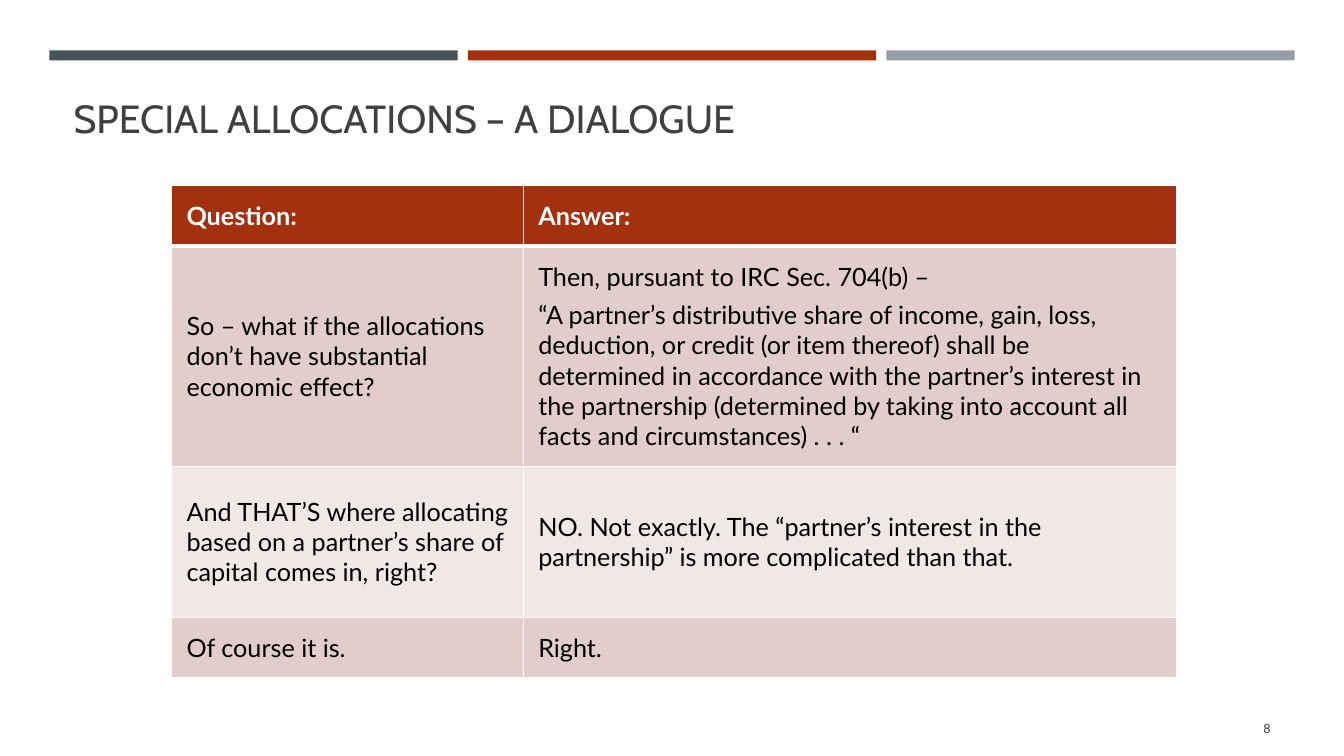
from dataclasses import dataclass

from lxml import etree
from pptx import Presentation
from pptx.dml.color import RGBColor
from pptx.enum.shapes import MSO_SHAPE
from pptx.enum.text import MSO_ANCHOR, PP_ALIGN
from pptx.oxml.ns import qn
from pptx.util import Inches, Pt

RECT = MSO_SHAPE.RECTANGLE
MIDDLE, BOTTOM = MSO_ANCHOR.MIDDLE, MSO_ANCHOR.BOTTOM
LEFT, RIGHT = PP_ALIGN.LEFT, PP_ALIGN.RIGHT


@dataclass(frozen=True)
class Theme:
    """Colours, fonts and type sizes of the slide."""
    slate: str = "465359"
    rust: str = "A5300F"
    steel: str = "969FA7"
    ink: str = "404040"
    black: str = "000000"
    white: str = "FFFFFF"
    rose: str = "E1CDCC"
    blush: str = "F0E8E7"
    head: str = "Cabin"
    body: str = "Lato"
    title: int = 28
    text: int = 18
    small: int = 9


THEME = Theme()
ROWS = [
    ("Question:", "Answer:"),
    ("So – what if the allocations don’t have substantial economic effect?",
     "Then, pursuant to IRC Sec. 704(b) –\n"
     "“A partner’s distributive share of income, gain, loss, deduction, or credit "
     "(or item thereof) shall be determined in accordance with the partner’s "
     "interest in the partnership (determined by taking into account all facts "
     "and circumstances) . . . “"),
    ("And THAT’S where allocating based on a partner’s share of capital comes in, right?",
     "NO. Not exactly. The “partner’s interest in the partnership” is more "
     "complicated than that."),
    ("Of course it is.", "Right."),
]


def style(frame, font, size, color, bold=False, align=LEFT):
    """Format every run of a text frame."""
    for para in frame.paragraphs:
        para.alignment = align
        for run in para.runs:
            run.font.name = font
            run.font.size = Pt(size)
            run.font.bold = bold
            run.font.color.rgb = RGBColor.from_string(color)


def add_bars(slide, left, top, width, height):
    """Draw the three equal bars with a fixed gap across the box."""
    gap = 0.1
    colors = (THEME.slate, THEME.rust, THEME.steel)
    span = (width - gap * (len(colors) - 1)) / len(colors)
    for i, color in enumerate(colors):
        bar = slide.shapes.add_shape(
            RECT, Inches(left + i * (span + gap)), Inches(top),
            Inches(span), Inches(height))
        bar.shadow.inherit = False
        bar.fill.solid()
        bar.fill.fore_color.rgb = RGBColor.from_string(color)
        bar.line.fill.background()


def set_title(slide, text, left, top, width, height):
    """Place and format the title placeholder."""
    title = slide.shapes.title
    title.left, title.top = Inches(left), Inches(top)
    title.width, title.height = Inches(width), Inches(height)
    frame = title.text_frame
    frame.text = text
    frame.word_wrap = True
    frame.vertical_anchor = BOTTOM
    style(frame, THEME.head, THEME.title, THEME.ink)


def add_edges(cell, top, base):
    """Give a cell white borders with the given top and base widths."""
    props = cell._tc.get_or_add_tcPr()
    edges = (("a:lnL", 1), ("a:lnR", 1), ("a:lnT", top), ("a:lnB", base))
    for i, (tag, width) in enumerate(edges):
        line = etree.Element(qn(tag), w=str(Pt(width)))
        fill = etree.SubElement(line, qn("a:solidFill"))
        etree.SubElement(fill, qn("a:srgbClr"), val=THEME.white)
        props.insert(i, line)


def fill_cell(cell, text, row):
    """Write one cell and style it by its row number."""
    head = row == 0
    cell.text_frame.text = text
    cell.vertical_anchor = MIDDLE
    cell.margin_left = cell.margin_right = Inches(0.15)
    cell.margin_top = cell.margin_bottom = Inches(0.15)
    for para in cell.text_frame.paragraphs[:-1]:
        para.space_after = Pt(6)
    style(cell.text_frame, THEME.body, THEME.text,
          THEME.white if head else THEME.black, head)
    band = THEME.rose if row % 2 else THEME.blush
    cell.fill.solid()
    cell.fill.fore_color.rgb = RGBColor.from_string(THEME.rust if head else band)
    add_edges(cell, 3 if row == 1 else 1, 3 if head else 1)


def add_grid(slide, left, top, width, height):
    """Build the question and answer table inside the box."""
    table = slide.shapes.add_table(
        len(ROWS), 2, Inches(left), Inches(top), Inches(width), Inches(height)).table
    for col, share in zip(table.columns, (0.35, 0.65)):
        col.width = Inches(width * share)
    tall = (0.6, 2.17, 1.5, 0.6)
    for row, part in zip(table.rows, tall):
        row.height = Inches(height * part / sum(tall))
    for r, texts in enumerate(ROWS):
        for c, text in enumerate(texts):
            fill_cell(table.cell(r, c), text, r)


def add_page(slide, text, left, top, width, height):
    """Write the page number at the right of the box."""
    box = slide.shapes.add_textbox(
        Inches(left), Inches(top), Inches(width), Inches(height))
    frame = box.text_frame
    frame.text = text
    frame.word_wrap = True
    frame.vertical_anchor = MIDDLE
    style(frame, THEME.body, THEME.small, THEME.ink, align=RIGHT)


def main():
    """Build the slide and save it."""
    deck = Presentation()
    deck.slide_width, deck.slide_height = Inches(13.33), Inches(7.5)
    slide = deck.slides.add_slide(deck.slide_layouts[5])
    add_bars(slide, 0.49, 0.5, 12.35, 0.1)
    set_title(slide, "SPECIAL ALLOCATIONS – A DIALOGUE", 0.63, 0.64, 12.06, 0.81)
    add_page(slide, "8", 11.55, 7.03, 1.15, 0.4)
    add_grid(slide, 1.7, 1.84, 9.97, 4.87)
    deck.save("out.pptx")


if __name__ == "__main__":
    main()
